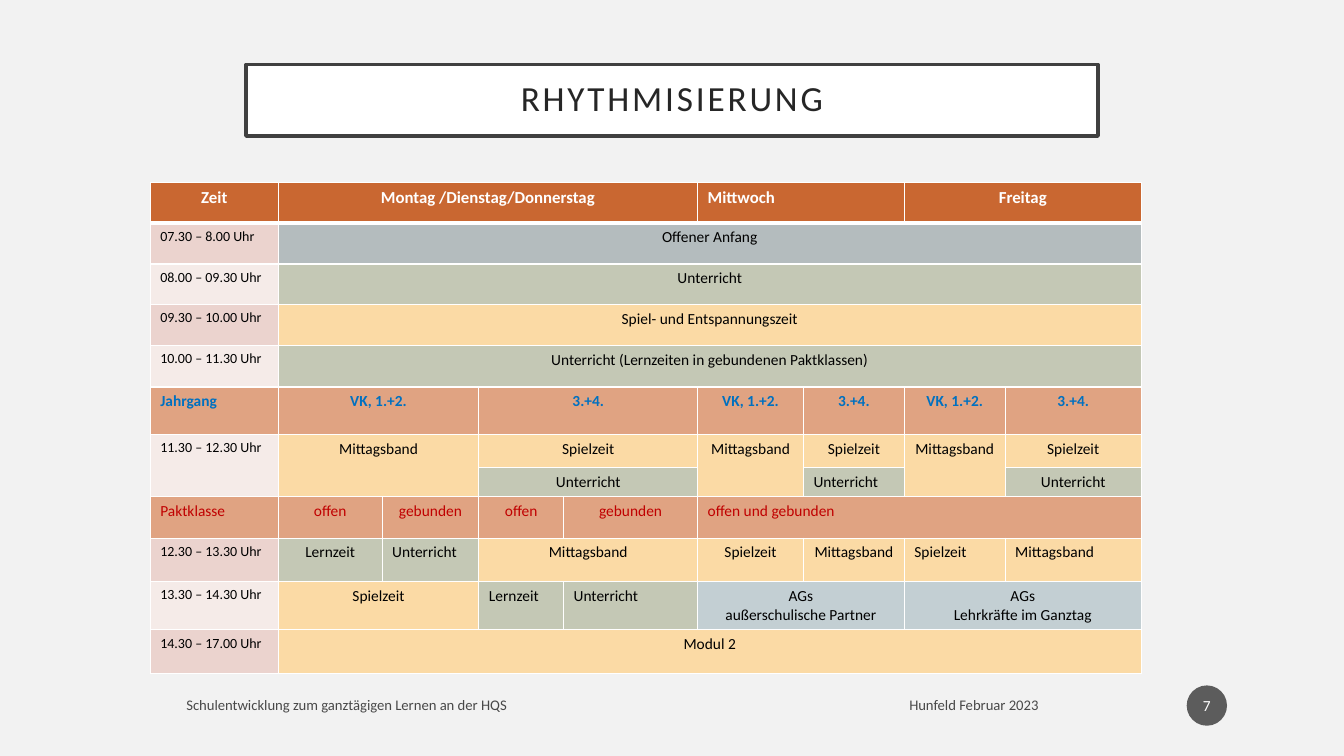
from collections import namedtuple

from lxml import etree
from pptx import Presentation
from pptx import util as u
from pptx.dml.color import RGBColor
from pptx.enum import shapes, text
from pptx.oxml.ns import qn

FONT = "Calibri"
LEFT, CENTER = text.PP_ALIGN.LEFT, text.PP_ALIGN.CENTER

BACKGROUND = RGBColor(0xF2, 0xF2, 0xF2)
WHITE = RGBColor(0xFF, 0xFF, 0xFF)
BLACK = RGBColor(0, 0, 0)
FRAME = RGBColor(0x40, 0x40, 0x40)
TITLE = RGBColor(0x26, 0x26, 0x26)
BADGE = RGBColor(0x1D, 0x1D, 0x1D)
BLUE = RGBColor(0x00, 0x70, 0xC0)
RED = RGBColor(0xC0, 0x00, 0x00)
ORANGE = RGBColor(0xC9, 0x67, 0x31)
SALMON = RGBColor(0xE0, 0xA3, 0x82)
PINK = RGBColor(0xEB, 0xD3, 0xCE)
PALE_PINK = RGBColor(0xF5, 0xEB, 0xE8)
GREY = RGBColor(0xB4, 0xBC, 0xBE)
GREEN = RGBColor(0xC4, 0xC8, 0xB5)
YELLOW = RGBColor(0xFB, 0xDA, 0xA5)
PALE_BLUE = RGBColor(0xC3, 0xCF, 0xD3)

# Activities are coloured by their first word
ACTIVITY_FILLS = {
    "Offener": GREY, "Unterricht": GREEN, "Lernzeit": GREEN, "AGs": PALE_BLUE,
    "Spiel-": YELLOW, "Spielzeit": YELLOW, "Mittagsband": YELLOW, "Modul": YELLOW,
}

# A style without a fill takes the fill of the activity
Style = namedtuple("Style", "size colour bold fill")
HEADER = Style(12, WHITE, True, ORANGE)
YEAR = Style(11, BLUE, True, SALMON)
GROUP = Style(11, RED, False, SALMON)
ACTIVITY = Style(11, BLACK, False, None)

Entry = namedtuple("Entry", "column text columns rows align", defaults=(1, 1, CENTER))

COLUMN_WIDTHS = [1.27, 1.03, 0.96, 0.84, 1.33, 1.05, 1, 1, 1.35]

# Row height, style, label in the first column, further entries
SCHEDULE = [
    (0.4, HEADER, "Zeit", [Entry(1, "Montag /Dienstag/Donnerstag", 4),
                           Entry(5, "Mittwoch", 2, align=LEFT), Entry(7, "Freitag", 2)]),
    (0.41, ACTIVITY, "07.30 – 8.00 Uhr", [Entry(1, "Offener Anfang", 8)]),
    (0.4, ACTIVITY, "08.00 – 09.30 Uhr", [Entry(1, "Unterricht", 8)]),
    (0.41, ACTIVITY, "09.30 – 10.00 Uhr", [Entry(1, "Spiel- und Entspannungszeit", 8)]),
    (0.41, ACTIVITY, "10.00 – 11.30 Uhr",
     [Entry(1, "Unterricht (Lernzeiten in gebundenen Paktklassen)", 8)]),
    (0.47, YEAR, "Jahrgang", [Entry(1, "VK, 1.+2.", 2), Entry(3, "3.+4.", 2),
                              Entry(5, "VK, 1.+2."), Entry(6, "3.+4."),
                              Entry(7, "VK, 1.+2."), Entry(8, "3.+4.")]),
    (0.33, ACTIVITY, "11.30 – 12.30 Uhr",
     [Entry(1, "Mittagsband", 2, 2), Entry(3, "Spielzeit", 2),
      Entry(5, "Mittagsband", 1, 2), Entry(6, "Spielzeit"),
      Entry(7, "Mittagsband", 1, 2), Entry(8, "Spielzeit")]),
    (0.29, ACTIVITY, None, [Entry(3, "Unterricht", 2), Entry(6, "Unterricht", align=LEFT),
                            Entry(8, "Unterricht")]),
    (0.41, GROUP, "Paktklasse", [Entry(1, "offen"), Entry(2, "gebunden"), Entry(3, "offen"),
                                 Entry(4, "gebunden"),
                                 Entry(5, "offen und gebunden", 4, align=LEFT)]),
    (0.43, ACTIVITY, "12.30 – 13.30 Uhr",
     [Entry(1, "Lernzeit"), Entry(2, "Unterricht", align=LEFT), Entry(3, "Mittagsband", 2),
      Entry(5, "Spielzeit"), Entry(6, "Mittagsband"),
      Entry(7, "Spielzeit", align=LEFT), Entry(8, "Mittagsband", align=LEFT)]),
    (0.48, ACTIVITY, "13.30 – 14.30 Uhr",
     [Entry(1, "Spielzeit", 2), Entry(3, "Lernzeit", align=LEFT),
      Entry(4, "Unterricht", align=LEFT), Entry(5, "AGs\naußerschulische Partner", 2),
      Entry(7, "AGs\nLehrkräfte im Ganztag", 2)]),
    (0.43, ACTIVITY, "14.30 – 17.00 Uhr", [Entry(1, "Modul 2", 8)]),
]


def inches(box):
    return [u.Inches(length) for length in box]


def format_text(frame, size, colour, bold=False, align=LEFT):
    for paragraph in frame.paragraphs:
        paragraph.alignment = align
        paragraph.font.name = FONT
        paragraph.font.size = u.Pt(size)
        paragraph.font.bold = bold
        paragraph.font.color.rgb = colour


def set_opacity(element, percent):
    for colour in element.iter(qn("a:srgbClr")):
        etree.SubElement(colour, qn("a:alpha")).set("val", str(percent * 1000))


def add_borders(cell, row):
    properties = cell._tc.get_or_add_tcPr()
    widths = {"L": 1, "R": 1, "T": 3 if row == 1 else 1, "B": 3 if row == 0 else 1}
    for side, width in widths.items():
        line = etree.SubElement(properties, qn(f"a:ln{side}"), w=str(u.Pt(width)))
        fill = etree.SubElement(line, qn("a:solidFill"))
        etree.SubElement(fill, qn("a:srgbClr"), val=str(WHITE))


def add_title(slide, box):
    title = slide.shapes.title
    title.left, title.top, title.width, title.height = inches(box)
    title.fill.solid()
    title.fill.fore_color.rgb = WHITE
    title.line.color.rgb = FRAME
    title.line.width = u.Pt(2.5)
    frame = title.text_frame
    frame.text = "RHYTHMISIERUNG"
    frame.word_wrap = True
    frame.auto_size = text.MSO_AUTO_SIZE.NONE
    frame.vertical_anchor = text.MSO_ANCHOR.MIDDLE
    frame.margin_left = frame.margin_right = u.Inches(0.2)
    frame.margin_top = frame.margin_bottom = u.Inches(0.2)
    format_text(frame, 25.2, TITLE, align=CENTER)
    paragraph = frame.paragraphs[0]
    paragraph.line_spacing = 0.9
    paragraph.runs[0].font._element.set("spc", "200")


def fill_entry(table, row, entry, style):
    cell = table.cell(row, entry.column)
    if entry.columns > 1 or entry.rows > 1:
        cell.merge(table.cell(row + entry.rows - 1, entry.column + entry.columns - 1))
    cell.text = entry.text
    cell.fill.solid()
    cell.fill.fore_color.rgb = style.fill or ACTIVITY_FILLS[entry.text.split()[0]]
    format_text(cell.text_frame, style.size, style.colour, style.bold, entry.align)


def add_schedule(slide, box):
    table = slide.shapes.add_table(len(SCHEDULE), len(COLUMN_WIDTHS), *inches(box)).table
    for column, width in zip(table.columns, COLUMN_WIDTHS):
        column.width = u.Inches(width)
    for row, (height, style, label, entries) in enumerate(SCHEDULE):
        table.rows[row].height = u.Inches(height)
        for column in range(len(COLUMN_WIDTHS)):
            add_borders(table.cell(row, column), row)
        # Labels: times alternate between two pinks
        if label:
            label_style = style
            if style is ACTIVITY:
                label_style = Style(10, BLACK, False, PINK if row % 2 else PALE_PINK)
            rows = max(entry.rows for entry in entries)
            align = CENTER if style is HEADER else LEFT
            fill_entry(table, row, Entry(0, label, 1, rows, align), label_style)
        for entry in entries:
            fill_entry(table, row, entry, style)


def add_footer(slide, box, date_tab):
    footer = slide.shapes.add_textbox(*inches(box))
    frame = footer.text_frame
    frame.word_wrap = True
    frame.vertical_anchor = text.MSO_ANCHOR.MIDDLE
    frame.text = "Schulentwicklung zum ganztägigen Lernen an der HQS\tHunfeld Februar 2023"
    format_text(frame, 10.5, BLACK)
    set_opacity(footer._element, 70)
    # Tab stop for the place and date
    properties = frame.paragraphs[0]._p.get_or_add_pPr()
    tabs = etree.Element(qn("a:tabLst"))
    etree.SubElement(tabs, qn("a:tab"), pos=str(u.Inches(date_tab)), algn="l")
    properties.find(qn("a:defRPr")).addprevious(tabs)


def add_page_badge(slide, box):
    badge = slide.shapes.add_shape(shapes.MSO_SHAPE.OVAL, *inches(box))
    badge.shadow.inherit = False
    badge.fill.solid()
    badge.fill.fore_color.rgb = BADGE
    set_opacity(badge._element, 70)
    badge.line.fill.background()
    frame = badge.text_frame
    frame.margin_left = frame.margin_right = u.Inches(0.02)
    frame.vertical_anchor = text.MSO_ANCHOR.MIDDLE
    frame.text = "7"
    format_text(frame, 11, WHITE, align=CENTER)


def main():
    presentation = Presentation()
    presentation.slide_width, presentation.slide_height = inches((13.33, 7.5))
    slide = presentation.slides.add_slide(presentation.slide_layouts[5])
    slide.background.fill.solid()
    slide.background.fill.fore_color.rgb = BACKGROUND
    add_title(slide, (2.44, 0.64, 8.45, 0.71))
    add_schedule(slide, (1.49, 1.81, 9.83, 4.87))
    add_footer(slide, (1.75, 6.82, 9.64, 0.35), 7.17)
    add_page_badge(slide, (11.77, 6.8, 0.4, 0.4))
    presentation.save("out.pptx")


if __name__ == "__main__":
    main()
